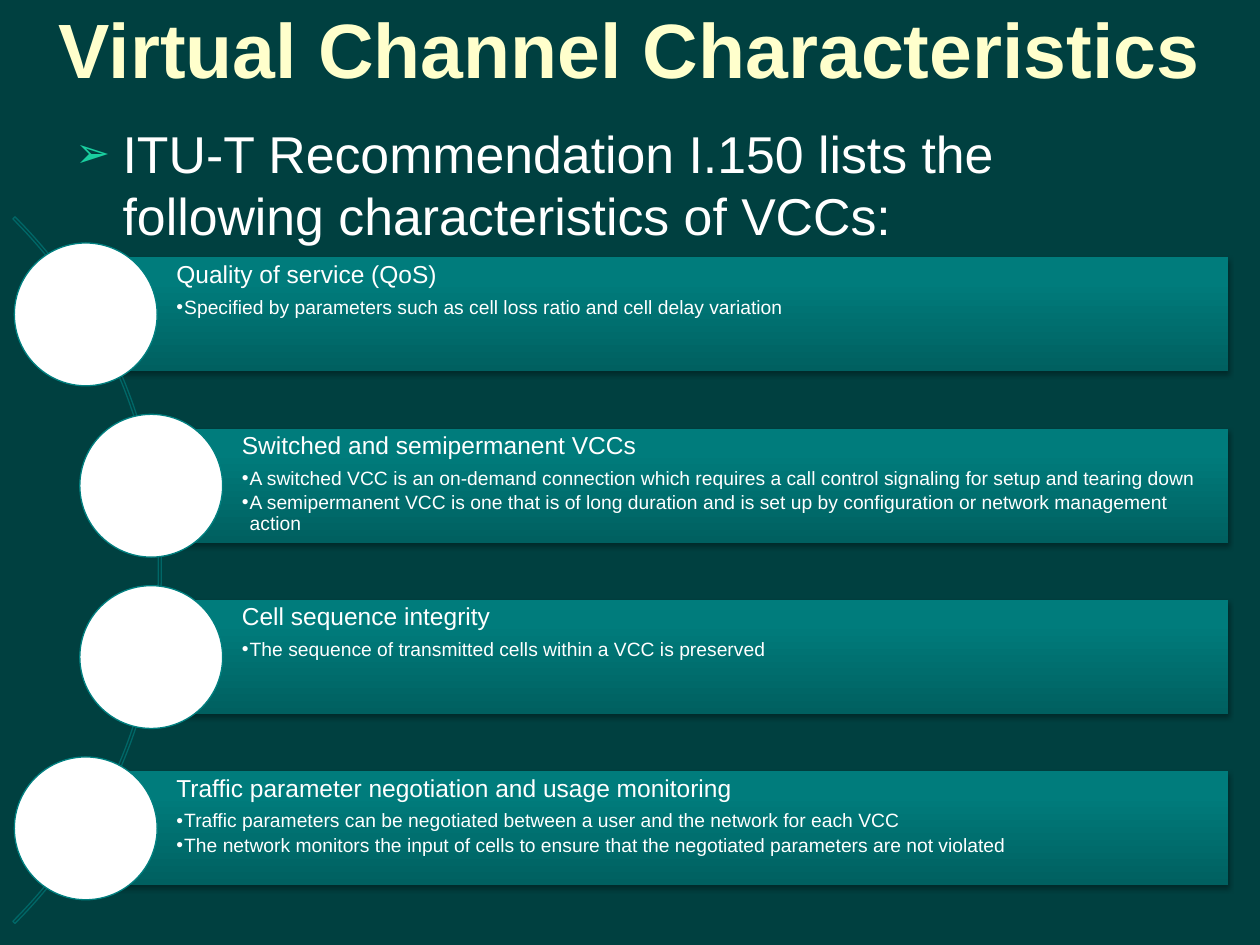
from lxml.etree import SubElement
from pptx import Presentation
from pptx.dml.color import RGBColor
from pptx.enum.shapes import MSO_SHAPE
from pptx.enum.text import MSO_ANCHOR, PP_ALIGN
from pptx.oxml import parse_xml
from pptx.oxml.ns import nsdecls, qn
from pptx.util import Pt


def rgb(color):
    return RGBColor.from_string(color)


def add_bullet(p, char, indent, color="FFFFFF", size=100):
    """Give a paragraph a hanging bullet; indent in points, size in percent."""
    pPr = p._p.get_or_add_pPr()
    pPr.set("marL", str(Pt(indent)))
    pPr.set("indent", str(-Pt(indent)))
    clr = SubElement(pPr, qn("a:buClr"))
    SubElement(clr, qn("a:srgbClr"), val=color)
    SubElement(pPr, qn("a:buSzPct"), val=str(size * 1000))
    SubElement(pPr, qn("a:buFont"), typeface="Arial")
    SubElement(pPr, qn("a:buChar"), char=char)


GRADIENT = f"""<a:gradFill {nsdecls("a")} rotWithShape="1"><a:gsLst>
<a:gs pos="0"><a:srgbClr val="006060"/></a:gs>
<a:gs pos="80000"><a:srgbClr val="007C7C"/></a:gs>
<a:gs pos="100000"><a:srgbClr val="007D7D"/></a:gs>
</a:gsLst><a:lin ang="16200000" scaled="0"/></a:gradFill>"""

SHADOW = f"""<a:outerShdw {nsdecls("a")} blurRad="{Pt(3.1)}" dist="{Pt(1.8)}"
dir="5400000" rotWithShape="0"><a:srgbClr val="000000"><a:alpha val="35000"/>
</a:srgbClr></a:outerShdw>"""

ITEMS = [
    (49, "Quality of service (QoS)", [
        "Specified by parameters such as cell loss ratio and cell delay variation"]),
    (86.4, "Switched and semipermanent VCCs", [
        "A switched VCC is an on-demand connection which requires a call control "
        "signaling for setup and tearing down",
        "A semipermanent VCC is one that is of long duration and is set up by "
        "configuration or network management action"]),
    (86.4, "Cell sequence integrity", [
        "The sequence of transmitted cells within a VCC is preserved"]),
    (49, "Traffic parameter negotiation and usage monitoring", [
        "Traffic parameters can be negotiated between a user and the network for each VCC",
        "The network monitors the input of cells to ensure that the negotiated "
        "parameters are not violated"]),
]
BAR_TOP, BAR_STEP, BAR_HEIGHT, BAR_RIGHT = 147, 97.9, 65.3, 702
CIRCLE = 81.6

prs = Presentation()
prs.slide_width, prs.slide_height = Pt(720), Pt(540)
s = prs.slides.add_slide(prs.slide_layouts[6])
s.background.fill.solid()
s.background.fill.fore_color.rgb = rgb("004040")

# Title and introduction
tf = s.shapes.add_textbox(Pt(0), Pt(-18), Pt(720), Pt(90)).text_frame
tf.word_wrap = True
tf.vertical_anchor = MSO_ANCHOR.MIDDLE
p = tf.paragraphs[0]
p.alignment = PP_ALIGN.CENTER
r = p.add_run()
r.text = "Virtual Channel Characteristics"
r.font.name, r.font.size, r.font.bold = "Arial", Pt(44), True
r.font.color.rgb = rgb("FFFFCC")

tf = s.shapes.add_textbox(Pt(36), Pt(66.2), Pt(648), Pt(72)).text_frame
tf.word_wrap = True
p = tf.paragraphs[0]
add_bullet(p, "➢", 27, "1ACE9F", 80)
r = p.add_run()
r.text = "ITU-T Recommendation I.150 lists the following characteristics of VCCs:"
r.font.name, r.font.size = "Arial", Pt(29.6)
r.font.color.rgb = rgb("FFFFFF")

# Arc behind the list
arc = s.shapes.add_shape(MSO_SHAPE.BLOCK_ARC, Pt(-478.8), Pt(40.3), Pt(571), Pt(571))
for i, value in enumerate((189, 27, 0.003)):
    arc.adjustments[i] = value
arc.shadow.inherit = False
arc.fill.background()
arc.line.color.rgb = rgb("006767")
arc.line.width = Pt(0.75)

# Bars with their circles
for i, (left, heading, points) in enumerate(ITEMS):
    top = BAR_TOP + i * BAR_STEP
    bar = s.shapes.add_shape(MSO_SHAPE.RECTANGLE, Pt(left), Pt(top),
                             Pt(BAR_RIGHT - left), Pt(BAR_HEIGHT))
    bar.line.fill.background()
    bar.fill.solid()
    spPr = bar._element.spPr
    spPr.replace(spPr.find(qn("a:solidFill")), parse_xml(GRADIENT))
    bar.shadow.inherit = False
    spPr.find(qn("a:effectLst")).append(parse_xml(SHADOW))

    tf = bar.text_frame
    tf.word_wrap = True
    tf.vertical_anchor = MSO_ANCHOR.TOP
    tf.margin_left = Pt(51.8)
    tf.margin_top = tf.margin_right = tf.margin_bottom = Pt(2.8)
    for j, text in enumerate([heading, *points]):
        p = tf.add_paragraph() if j else tf.paragraphs[0]
        p.alignment = PP_ALIGN.LEFT
        p.line_spacing = 0.9
        p.space_after = Pt(2 if j else 5)
        if j:
            p.level = 1
            add_bullet(p, "•", 4.5)
        r = p.add_run()
        r.text = text
        r.font.name, r.font.size = "Arial", Pt(11 if j else 14)
        r.font.color.rgb = rgb("FFFFFF")

    circle = s.shapes.add_shape(MSO_SHAPE.OVAL, Pt(left - CIRCLE / 2),
                                Pt(top + (BAR_HEIGHT - CIRCLE) / 2), Pt(CIRCLE), Pt(CIRCLE))
    circle.shadow.inherit = False
    circle.fill.solid()
    circle.fill.fore_color.rgb = rgb("FFFFFF")
    circle.line.color.rgb = rgb("008080")
    circle.line.width = Pt(0.75)

prs.save("out.pptx")
